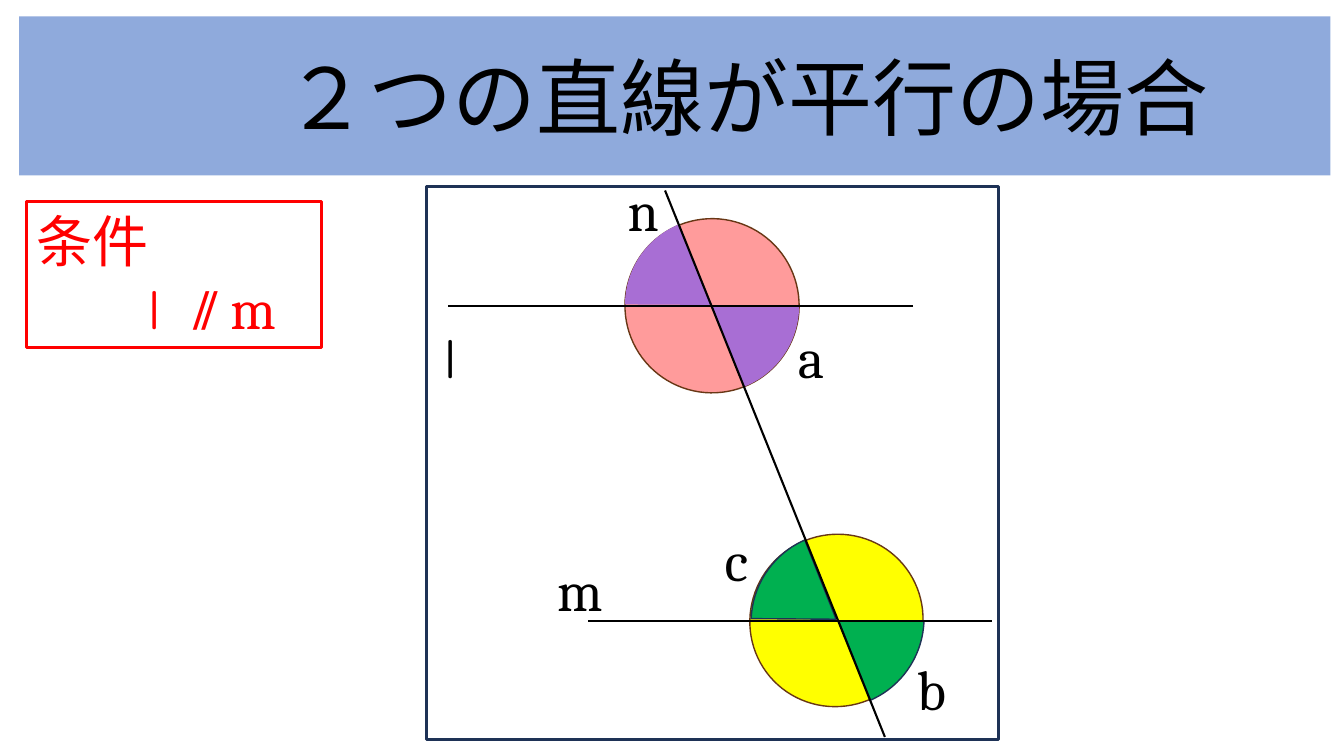
from lxml.etree import SubElement
from pptx import Presentation
from pptx.dml.color import RGBColor
from pptx.enum.shapes import MSO_CONNECTOR as Link, MSO_SHAPE as Shape
from pptx.enum.text import MSO_ANCHOR as Anchor, MSO_AUTO_SIZE as Fit, PP_ALIGN as Align
from pptx.oxml.ns import qn
from pptx.util import Cm, Pt

BLACK, RED, NAVY, BROWN = "000000", "FF0000", "1E3256", "683715"
PINK, PURPLE, YELLOW, GREEN = "FF9B9B", "A86ED4", "FFFF00", "00B050"
SERIF, HAND = "Cambria", "Comic Neue"


def color(code):
    return RGBColor.from_string(code)


def write(paragraph, text, size=40, font=SERIF, ink=BLACK, spread=0):
    run = paragraph.add_run()
    run.text = text
    run.font.size = Pt(size)
    run.font.name = font
    run.font.color.rgb = color(ink)
    if spread:
        run._r.get_or_add_rPr().set("spc", str(spread * 100))


class Board:
    def __init__(self, slide):
        self.slide = slide
        self.layer = slide.shapes

    def begin_group(self):
        self.layer = self.slide.shapes.add_group_shape().shapes

    def end_group(self):
        self.layer = self.slide.shapes

    def title(self, text, box, fill):
        banner = self.slide.shapes.title
        banner.left, banner.top, banner.width, banner.height = map(Cm, box)
        banner.fill.solid()
        banner.fill.fore_color.rgb = color(fill)
        frame = banner.text_frame
        frame.auto_size = Fit.NONE
        frame.word_wrap = True
        frame.vertical_anchor = Anchor.MIDDLE
        frame.margin_left = Cm(3.86)
        frame.paragraphs[0].alignment = Align.CENTER
        write(frame.paragraphs[0], text, size=60)

    def shape(self, kind, box, fill=None, line=None, weight=1, turn=0, angles=()):
        form = self.layer.add_shape(kind, *map(Cm, box))
        form.shadow.inherit = False
        form.rotation = turn
        for index, angle in enumerate(angles):
            form.adjustments[index] = angle
        if fill:
            form.fill.solid()
            form.fill.fore_color.rgb = color(fill)
        else:
            form.fill.background()
        if line:
            form.line.color.rgb = color(line)
            form.line.width = Pt(weight)
        else:
            form.line.fill.background()
        return form

    def label(self, text, left, top, font=SERIF):
        frame = self.layer.add_textbox(Cm(left), Cm(top), Cm(1.19), Cm(2)).text_frame
        frame.word_wrap = True
        write(frame.paragraphs[0], text, font=font)

    def line(self, *ends):
        rule = self.layer.add_connector(Link.STRAIGHT, *map(Cm, ends))
        rule.line.color.rgb = color(BLACK)
        rule.line.width = Pt(1.5)
        SubElement(rule._element.spPr, qn("a:effectLst"))

    def condition(self, box):
        frame = self.shape(Shape.RECTANGLE, box, line=RED, weight=2).text_frame
        frame.word_wrap = True
        frame.vertical_anchor = Anchor.TOP
        heading, relation = frame.paragraphs[0], frame.add_paragraph()
        heading.alignment = relation.alignment = Align.LEFT
        relation._p.get_or_add_pPr().set("marL", str(Pt(80)))
        write(heading, "条件", font=HAND, ink=RED)
        write(relation, "l ", font=HAND, ink=RED, spread=5)
        write(relation, "⫽ m", ink=RED)


def main():
    deck = Presentation()
    deck.slide_width, deck.slide_height = Cm(33.87), Cm(19.05)
    board = Board(deck.slides.add_slide(deck.slide_layouts[5]))

    board.title("２つの直線が平行の場合", (0.48, 0.41, 33.05, 4.01), "8FAADC")
    board.condition((0.66, 5.08, 7.44, 3.68))

    board.begin_group()
    for circle, fill in (
        ((18.92, 13.44, 4.32, 4.39), YELLOW),
        ((15.75, 5.51, 4.39, 4.39), PINK),
    ):
        board.shape(Shape.OVAL, circle, fill, BROWN, turn=53.4)
    for sector, fill, line, turn, angles in (
        ((15.75, 5.51, 4.39, 4.39), PURPLE, None, 214.9, (86.82, 128)),
        ((15.75, 5.49, 4.39, 4.39), PURPLE, None, 35.6, (86.82, 126.86)),
        ((19.02, 13.46, 4.24, 4.39), GREEN, NAVY, 214.9, (86.91, 128)),
        ((18.95, 13.41, 4.24, 4.39), GREEN, NAVY, 31.9, (89.11, 129.91)),
    ):
        board.shape(Shape.PIE, sector, fill, line, turn=turn, angles=angles)
    for line_l_m_n in (
        (23.01, 7.7, 11.28, 7.7),
        (24.99, 15.65, 14.81, 15.65),
        (22.3, 18.57, 16.76, 4.8),
    ):
        board.line(*line_l_m_n)
    for name, left, top in (
        ("a", 19.86, 8),
        ("b", 22.86, 16.36),
        ("c", 18.01, 13.11),
        ("m", 13.79, 13.87),
        ("n", 15.57, 4.29),
    ):
        board.label(name, left, top)
    board.label("l", 10.95, 8, font=HAND)
    board.end_group()

    board.shape(Shape.RECTANGLE, (10.74, 4.7, 14.43, 13.94), line=NAVY, weight=2)
    deck.save("out.pptx")


if __name__ == "__main__":
    main()
